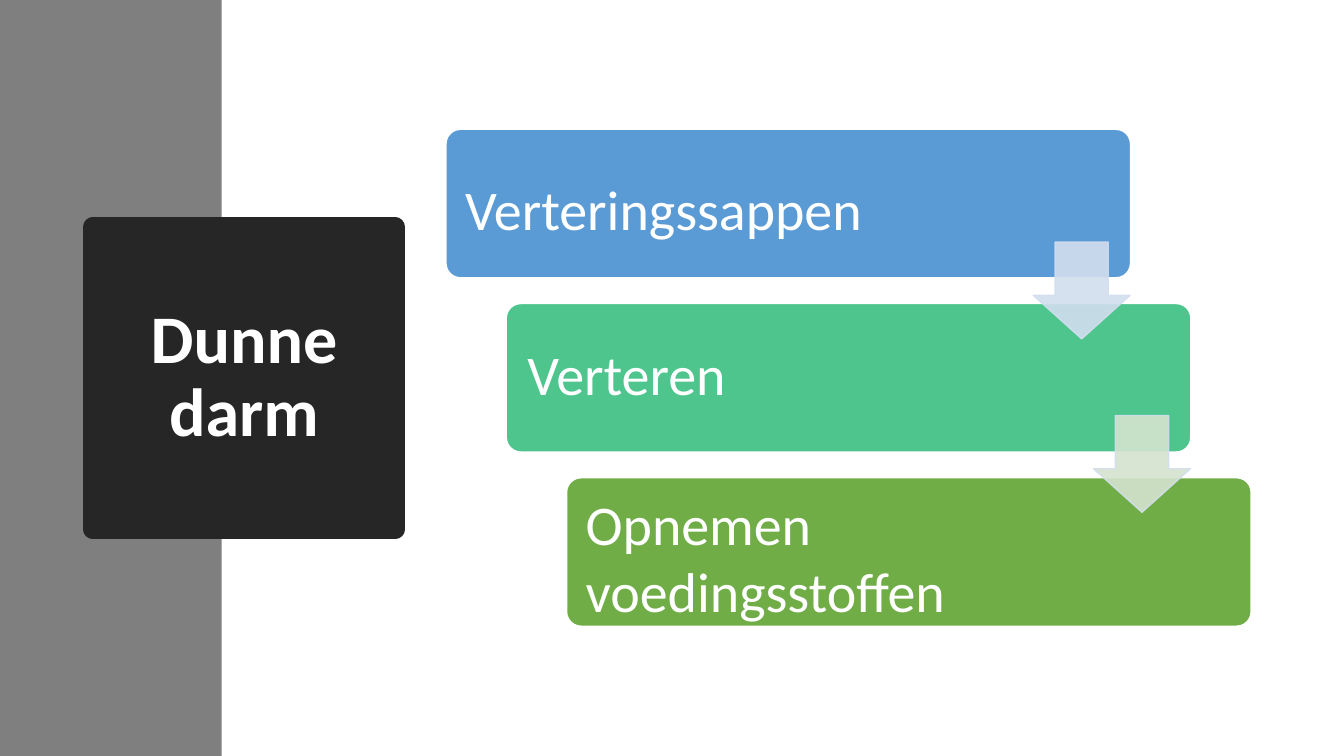
from pptx import Presentation
from pptx.dml.color import RGBColor
from pptx.enum import shapes, text
from pptx.oxml import ns, xmlchemy
from pptx.util import Cm, Pt

WHITE = RGBColor(0xFF, 0xFF, 0xFF)
GRAY = RGBColor(0x7F, 0x7F, 0x7F)
CHARCOAL = RGBColor(0x26, 0x26, 0x26)
BLUE = RGBColor(0x5B, 0x9B, 0xD5)
TEAL = RGBColor(0x4D, 0xC5, 0x8D)
GREEN = RGBColor(0x70, 0xAD, 0x47)
PALE_BLUE = RGBColor(0xD2, 0xDE, 0xEF)
PALE_GREEN = RGBColor(0xD5, 0xE3, 0xCF)

KIND = shapes.MSO_SHAPE
STEPS = [
    ("Verteringssappen", BLUE, 0.38, 0.63, 1),
    ("Verteren", TEAL, 0.43, 0.43, 0.9),
    ("Opnemen voedingsstoffen", GREEN, 0.38, 0.63, 1),
]


def add_block(slide, kind, left, top, width, height, fill, line=None, weight=0):
    block = slide.shapes.add_shape(kind, Cm(left), Cm(top), Cm(width), Cm(height))
    block.shadow.inherit = False
    block.fill.solid()
    block.fill.fore_color.rgb = fill
    if line is None:
        block.line.fill.background()
    else:
        block.line.color.rgb = line
        block.line.width = Pt(weight)
    return block


def write(block, words, size, align, spacing, insets, bold=False):
    frame = block.text_frame
    frame.word_wrap = True
    frame.vertical_anchor = text.MSO_ANCHOR.MIDDLE
    frame.margin_left, frame.margin_top, frame.margin_right, frame.margin_bottom = map(Cm, insets)
    paragraph = frame.paragraphs[0]
    paragraph.text = words
    paragraph.alignment = align
    paragraph.line_spacing = spacing
    paragraph.font.name = "Calibri"
    paragraph.font.size = Pt(size)
    paragraph.font.bold = bold
    paragraph.font.color.rgb = WHITE


def add_step(slide, index, words, fill, inset, top_inset, spacing):
    step = add_block(slide, KIND.ROUNDED_RECTANGLE, 11.23 + 1.52 * index,
                     3.25 + 4.39 * index, 17.27, 3.76, fill, WHITE, 1.5)
    step.adjustments[0] = 0.1
    write(step, words, 40, text.PP_ALIGN.LEFT, spacing, (inset, top_inset, 4.34, inset))


def add_arrow(slide, index, fill):
    arrow = add_block(slide, KIND.DOWN_ARROW, 26.04 + 1.52 * index,
                      6.1 + 4.37 * index, 2.44, 2.44, fill, PALE_BLUE, 1)
    arrow.adjustments[0] = 0.55
    arrow.adjustments[1] = 0.45
    for color in arrow.fill._xPr.iter(ns.qn("a:srgbClr")):
        alpha = xmlchemy.OxmlElement("a:alpha")
        alpha.set("val", "90000")
        color.append(alpha)


def main():
    deck = Presentation()
    deck.slide_width, deck.slide_height = Cm(33.87), Cm(19.05)
    slide = deck.slides.add_slide(deck.slide_layouts[6])

    add_block(slide, KIND.RECTANGLE, 0, 0, 5.59, 19.05, GRAY)
    title = add_block(slide, KIND.RECTANGLE, 2.34, 5.72, 7.62, 7.62, CHARCOAL, CHARCOAL, 13.75)
    write(title, "Dunne darm", 48.6, text.PP_ALIGN.CENTER, 0.9, (0.25, 0.13, 0.25, 0.13), True)

    for index, step in enumerate(STEPS):
        add_step(slide, index, *step)
    for index, fill in enumerate((PALE_BLUE, PALE_GREEN)):
        add_arrow(slide, index, fill)

    deck.save("out.pptx")


if __name__ == "__main__":
    main()
